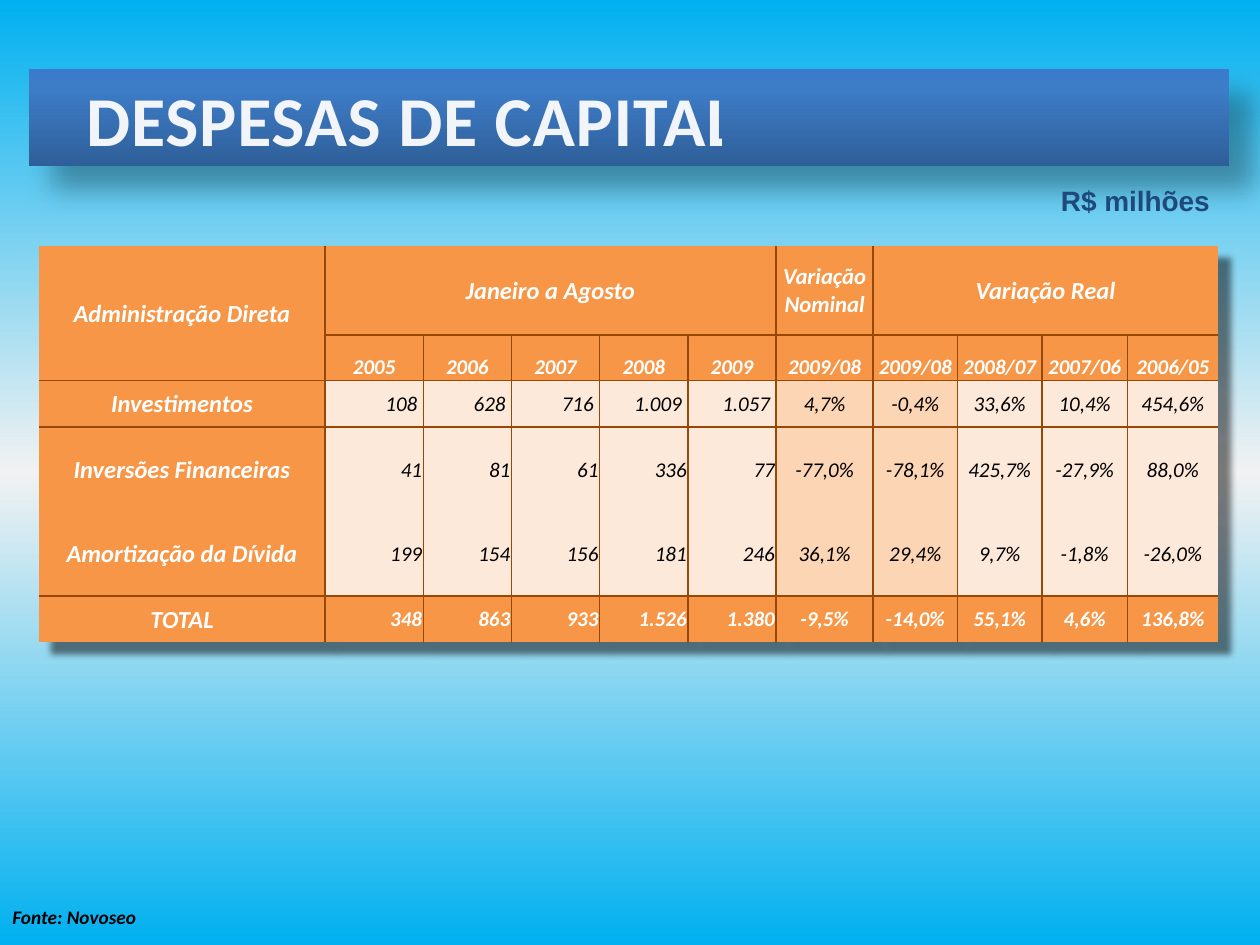
"""Build the slide on capital expenditure with its table of values and variations."""
import pptx
import pptx.dml.color
import pptx.enum.shapes
import pptx.enum.text
import pptx.oxml
import pptx.oxml.ns
import pptx.util

Pt = pptx.util.Pt
ALIGN = pptx.enum.text.PP_ALIGN
ANCHOR = pptx.enum.text.MSO_ANCHOR
SHAPE = pptx.enum.shapes.MSO_SHAPE
DRAWING = 'xmlns:a="http://schemas.openxmlformats.org/drawingml/2006/main"'
NO_STYLE = "{2D5ABB26-0587-4C30-8999-92F81FD0307C}"
COLORS = {
    "sky": "00B0F0", "haze": "F2F2F2", "banner_low": "2F5F99",
    "banner_mid": "3D7CC7", "banner_top": "3A7CCB", "title": "FCFCFD",
    "outline": "101A26", "unit": "1F497D", "orange": "F79646",
    "peach": "FCD5B5", "cream": "FDE9D9", "rule": "974807",
    "white": "FFFFFF", "black": "000000",
}
COLUMNS = [163.44, 56.16, 50.4, 50.4, 50.4, 50.4, 55.44, 48.24, 48.24, 48.96, 51.84]
ROWS = [51.12, 25.92, 26.64, 48.24, 48.24, 26.64]
CONTENT = [
    ["Administração Direta", "Janeiro a Agosto", "", "", "", "",
     "Variação Nominal", "Variação Real", "", "", ""],
    ["", "2005", "2006", "2007", "2008", "2009",
     "2009/08", "2009/08", "2008/07", "2007/06", "2006/05"],
    ["Investimentos", "108 ", "628 ", "716 ", "1.009 ", "1.057 ",
     "4,7%", "-0,4%", "33,6%", "10,4%", "454,6%"],
    ["Inversões Financeiras", "41", "81", "61", "336", "77",
     "-77,0%", "-78,1%", "425,7%", "-27,9%", "88,0%"],
    ["Amortização da Dívida", "199", "154", "156", "181", "246",
     "36,1%", "29,4%", "9,7%", "-1,8%", "-26,0%"],
    ["TOTAL", "348", "863", "933", "1.526", "1.380",
     "-9,5%", "-14,0%", "55,1%", "4,6%", "136,8%"],
]
MERGES = [((0, 0), (1, 0)), ((0, 1), (0, 5)), ((0, 7), (0, 10))]
RULED_ROWS = (0, 1, 4)


def color_xml(name, alpha=100):
    """Return a solid fill as XML text."""
    return (f'<a:solidFill {DRAWING}><a:srgbClr val="{COLORS[name]}">'
            f'<a:alpha val="{alpha * 1000}"/></a:srgbClr></a:solidFill>')


def shadow_element(alpha, blur, distance):
    """Return an effect list with a black shadow towards the lower right."""
    return pptx.oxml.parse_xml(
        f'<a:effectLst {DRAWING}><a:outerShdw blurRad="{Pt(blur)}" dist="{Pt(distance)}" '
        f'dir="2700000" algn="tl" rotWithShape="0"><a:srgbClr val="{COLORS["black"]}">'
        f'<a:alpha val="{alpha * 1000}"/></a:srgbClr></a:outerShdw></a:effectLst>')


def set_gradient(fill, owner, stops):
    """Fill the owner with a gradient that rises from bottom to top."""
    fill.gradient()
    fill.gradient_angle = 90
    stop_list = owner.find(".//" + pptx.oxml.ns.qn("a:gsLst"))
    for stop in list(stop_list):
        stop_list.remove(stop)
    for position, name in stops:
        stop_list.append(pptx.oxml.parse_xml(
            f'<a:gs {DRAWING} pos="{position * 1000}">'
            f'<a:srgbClr val="{COLORS[name]}"/></a:gs>'))


def add_span(para, text, size, color, font="Calibri", bold=True, italic=False):
    """Add one formatted run to a paragraph."""
    span = para.add_run()
    span.text = text
    span.font.size = Pt(size)
    span.font.name = font
    span.font.bold = bold
    span.font.italic = italic
    span.font.color.rgb = pptx.dml.color.RGBColor.from_string(COLORS[color])
    return span


def add_banner(page):
    """Add the blue band behind the title."""
    band = page.shapes.add_shape(SHAPE.RECTANGLE, Pt(16.5), Pt(39.5), Pt(686), Pt(55.5))
    band.line.fill.background()
    set_gradient(band.fill, band._element,
                 [(0, "banner_low"), (80, "banner_mid"), (100, "banner_top")])
    band._element.spPr.append(shadow_element(30, 15, 18))


def add_title(page, text):
    """Add the title with its faint outline and soft shadow."""
    box = page.shapes.add_shape(SHAPE.FLOWCHART_ALTERNATE_PROCESS,
                                Pt(39.5), Pt(39.5), Pt(664), Pt(56))
    box.shadow.inherit = False
    box.fill.background()
    box.line.fill.background()
    box.text_frame.vertical_anchor = ANCHOR.MIDDLE
    para = box.text_frame.paragraphs[0]
    para.alignment = ALIGN.LEFT
    properties = add_span(para, text, 40, "title").font._element
    properties.set("spc", "50")
    fill = properties.find(pptx.oxml.ns.qn("a:solidFill"))
    fill.addprevious(pptx.oxml.parse_xml(
        f'<a:ln {DRAWING} w="{Pt(1.06)}">{color_xml("outline", 6)}</a:ln>'))
    fill.addnext(shadow_element(50, 4, 2))
    properties.replace(fill, pptx.oxml.parse_xml(color_xml("title", 95)))


def add_label(page, text, place, size, color, align=ALIGN.LEFT, **style):
    """Add a one-line text box."""
    box = page.shapes.add_textbox(*map(Pt, place))
    box.text_frame.word_wrap = True
    para = box.text_frame.paragraphs[0]
    para.alignment = align
    add_span(para, text, size, color, **style)


def rule_cell(cell, row, column):
    """Draw the inner rules that touch a cell."""
    last_column = column + cell.span_width - 1 if cell.is_merge_origin else column
    last_row = row + cell.span_height - 1 if cell.is_merge_origin else row
    sides = {"L": column > 0, "R": last_column < len(COLUMNS) - 1,
             "T": row - 1 in RULED_ROWS, "B": last_row in RULED_ROWS}
    properties = cell._tc.get_or_add_tcPr()
    for index, side in enumerate(side for side in sides if sides[side]):
        properties.insert(index, pptx.oxml.parse_xml(
            f'<a:ln{side} {DRAWING} w="{Pt(1)}">{color_xml("rule")}</a:ln{side}>'))


def fill_cell(cell, row, column, text):
    """Set the text, fill and rules of a table cell by its place."""
    body = 2 <= row <= 4 and column > 0
    amount = row >= 2 and 1 <= column <= 5
    shade = ("peach" if column in (6, 7) else "cream") if body else "orange"
    cell.fill.solid()
    cell.fill.fore_color.rgb = pptx.dml.color.RGBColor.from_string(COLORS[shade])
    cell.margin_left = Pt(8.64 if amount else 0.72)
    cell.margin_right = cell.margin_top = Pt(0.72)
    cell.margin_bottom = Pt(0)
    cell.vertical_anchor = ANCHOR.BOTTOM if row == 1 else ANCHOR.MIDDLE
    para = cell.text_frame.paragraphs[0]
    para.alignment = ALIGN.RIGHT if amount else ALIGN.CENTER
    size = 12
    if column == 0 or row == 0:
        size = 13 if column == 6 else 14
    add_span(para, text, size, "black" if body else "white", bold=not body, italic=True)
    rule_cell(cell, row, column)


def add_expense_table(page):
    """Add the table of expenses."""
    frame = page.shapes.add_table(len(ROWS), len(COLUMNS), Pt(22.32), Pt(140.4),
                                  Pt(sum(COLUMNS)), Pt(sum(ROWS)))
    table = frame.table
    table.first_row = table.horz_banding = False
    properties = table._tbl.tblPr
    properties.find(pptx.oxml.ns.qn("a:tableStyleId")).text = NO_STYLE
    properties.insert(0, shadow_element(50, 4, 10))
    for column, width in zip(table.columns, COLUMNS):
        column.width = Pt(width)
    for row, height in zip(table.rows, ROWS):
        row.height = Pt(height)
    for first, last in MERGES:
        table.cell(*first).merge(table.cell(*last))
    for row, texts in enumerate(CONTENT):
        for column, text in enumerate(texts):
            cell = table.cell(row, column)
            if not cell.is_spanned:
                fill_cell(cell, row, column, text)


def main():
    """Build and save the deck."""
    deck = pptx.Presentation()
    deck.slide_width, deck.slide_height = Pt(720), Pt(540)
    page = deck.slides.add_slide(deck.slide_layouts[6])
    set_gradient(page.background.fill, page._element,
                 [(0, "sky"), (50, "haze"), (100, "sky")])
    add_banner(page)
    add_title(page, "DESPESAS DE CAPITAL")
    add_label(page, "R$ milhões", (574, 101.5, 124.5, 26.5), 16, "unit",
              ALIGN.RIGHT, font="Arial")
    add_expense_table(page)
    add_label(page, "Fonte: Novoseo", (0, 514, 292, 21), 11, "black", italic=True)
    deck.save("out.pptx")


if __name__ == "__main__":
    main()
